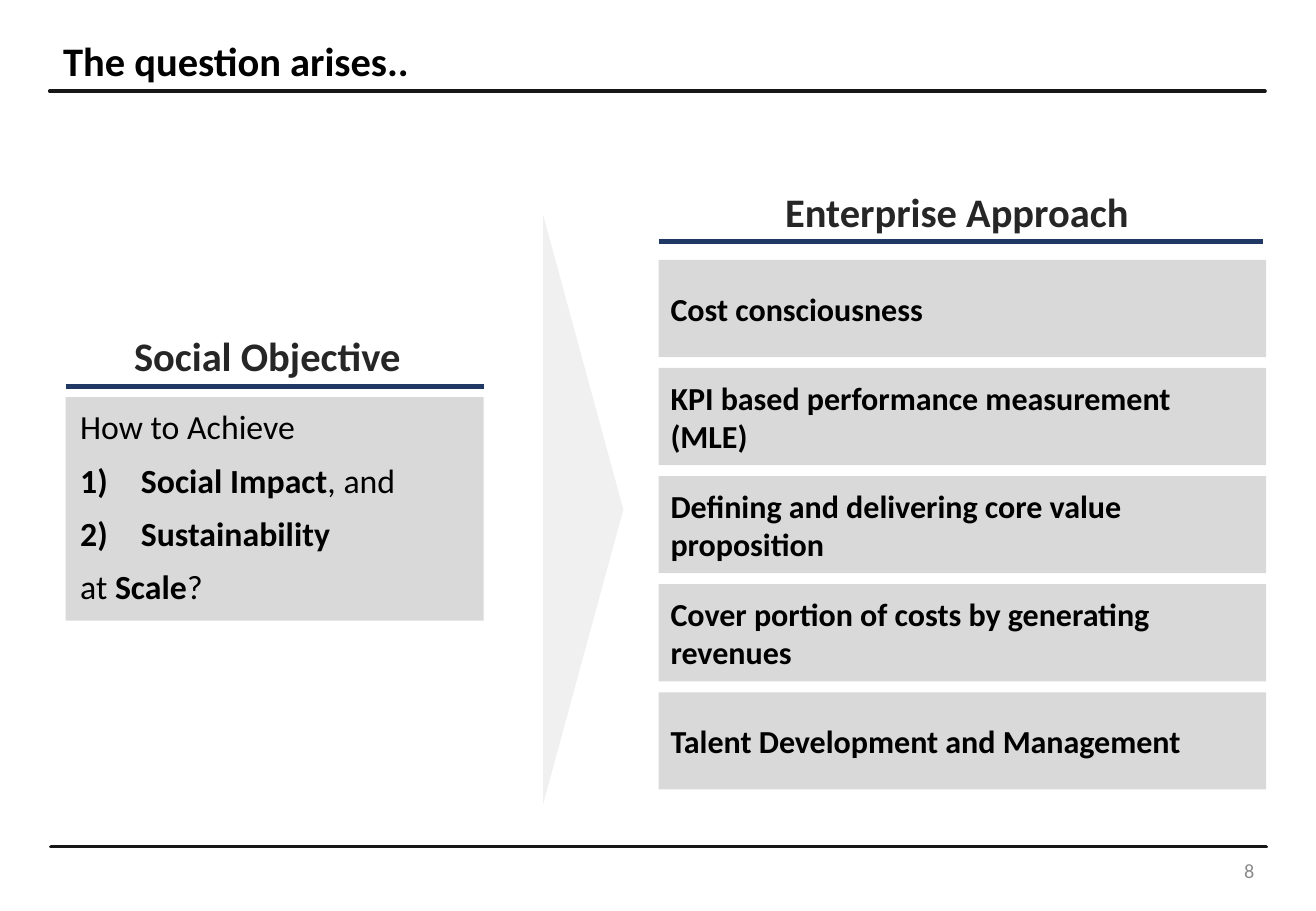
from dataclasses import dataclass

from lxml.etree import SubElement
from pptx import Presentation
from pptx.dml.color import RGBColor
from pptx.enum.shapes import MSO_CONNECTOR, MSO_SHAPE
from pptx.enum.text import MSO_ANCHOR, PP_ALIGN
from pptx.oxml.ns import qn
from pptx.util import Inches, Pt


@dataclass(frozen=True)
class Theme:
    font: str = "Calibri"
    black: str = "000000"
    heading: str = "262626"
    number: str = "8C8C8C"
    panel: str = "D9D9D9"
    frame: str = "181717"
    navy: str = "203864"
    heading_size: int = 24
    body_size: int = 20
    bar_size: int = 19
    number_size: int = 12


theme = Theme()
deck = Presentation()
deck.slide_width, deck.slide_height = Inches(10.83), Inches(7.5)
page = deck.slides.add_slide(deck.slide_layouts[6])


def add_span(para, text, size, color, bold=False):
    span = para.add_run()
    span.text = text
    span.font.name = theme.font
    span.font.size = Pt(size)
    span.font.bold = bold
    span.font.color.rgb = RGBColor.from_string(color)


def add_panel(kind, left, top, width, height):
    panel = page.shapes.add_shape(kind, Inches(left), Inches(top), Inches(width), Inches(height))
    panel.shadow.inherit = False
    panel.fill.solid()
    panel.fill.fore_color.rgb = RGBColor.from_string(theme.panel)
    panel.line.fill.background()
    panel.text_frame.word_wrap = True
    panel.text_frame.vertical_anchor = MSO_ANCHOR.MIDDLE
    return panel


# Frame lines and heading underlines
for left, right, y, color, weight, cap in [
    (0.41, 10.41, 0.75, theme.frame, 2.25, "rnd"),
    (0.42, 10.42, 6.97, theme.frame, 2.25, "rnd"),
    (0.54, 3.98, 3.18, theme.navy, 3, "flat"),
    (5.42, 10.39, 1.99, theme.navy, 3, "flat"),
]:
    rule = page.shapes.add_connector(
        MSO_CONNECTOR.STRAIGHT, Inches(left), Inches(y), Inches(right), Inches(y))
    rule.line.color.rgb = RGBColor.from_string(color)
    rule.line.width = Pt(weight)
    properties = rule._element.spPr
    properties.find(qn("a:ln")).set("cap", cap)
    SubElement(properties, qn("a:effectLst"))

# Title, page number and column headings
for text, place, size, color, bold, align, anchor in [
    ("The question arises..", (0.42, 0.31, 9.09, 0.42), theme.heading_size, theme.black,
     True, PP_ALIGN.LEFT, MSO_ANCHOR.MIDDLE),
    ("8", (8.13, 6.98, 2.29, 0.4), theme.number_size, theme.number,
     False, PP_ALIGN.RIGHT, MSO_ANCHOR.MIDDLE),
    ("Social Objective", (0.42, 2.68, 3.56, 0.5), theme.heading_size, theme.heading,
     True, PP_ALIGN.CENTER, MSO_ANCHOR.TOP),
    ("Enterprise Approach", (5.3, 1.49, 5.15, 0.5), theme.heading_size, theme.heading,
     True, PP_ALIGN.CENTER, MSO_ANCHOR.TOP),
]:
    box = page.shapes.add_textbox(*[Inches(length) for length in place])
    box.text_frame.word_wrap = True
    box.text_frame.vertical_anchor = anchor
    para = box.text_frame.paragraphs[0]
    para.alignment = align
    if anchor == MSO_ANCHOR.MIDDLE:
        para.line_spacing = 0.9
    add_span(para, text, size, color, bold)

# Social objective: (numbered, [(text, bold), ...]) per paragraph
objective = [
    (False, [("How to Achieve", False)]),
    (True, [("Social Impact", True), (", and", False)]),
    (True, [("Sustainability", True)]),
    (False, [("at ", False), ("Scale", True), ("?", False)]),
]
frame = add_panel(MSO_SHAPE.RECTANGLE, 0.54, 3.27, 3.44, 1.84).text_frame
frame.margin_left = frame.margin_right = Inches(0.12)
frame.margin_top = frame.margin_bottom = Inches(0.06)
for index, (numbered, spans) in enumerate(objective):
    para = frame.add_paragraph() if index else frame.paragraphs[0]
    para.alignment = PP_ALIGN.LEFT
    para.line_spacing = 0.9
    if index:
        para.space_before = Pt(10)
    if numbered:
        settings = para._p.get_or_add_pPr()
        settings.set("marL", str(Inches(0.5)))
        settings.set("indent", str(-Inches(0.5)))
        SubElement(settings, qn("a:buFont"), typeface="+mj-lt")
        SubElement(settings, qn("a:buAutoNum"), type="arabicParenR")
    for text, bold in spans:
        add_span(para, text, theme.body_size, theme.black, bold)

# Translucent arrow between the columns
arrow = add_panel(MSO_SHAPE.RIGHT_ARROW, 4.47, 1.77, 0.66, 4.85)
arrow.adjustments[0] = 0.3
arrow.adjustments[1] = 1.02
arrow_color = arrow._element.spPr.find(qn("a:solidFill")).find(qn("a:srgbClr"))
SubElement(arrow_color, qn("a:alpha"), val="39000")

# Enterprise approach bars
approaches = [
    "Cost consciousness",
    "KPI based performance measurement (MLE)",
    "Defining and delivering core value proposition",
    "Cover portion of costs by generating revenues",
    "Talent Development and Management",
]
bar_top, bar_pitch = 2.14, 0.89
for index, text in enumerate(approaches):
    bar = add_panel(MSO_SHAPE.RECTANGLE, 5.42, bar_top + index * bar_pitch, 5, 0.8)
    para = bar.text_frame.paragraphs[0]
    para.alignment = PP_ALIGN.LEFT
    add_span(para, text, theme.bar_size, theme.black, True)

deck.save("out.pptx")
